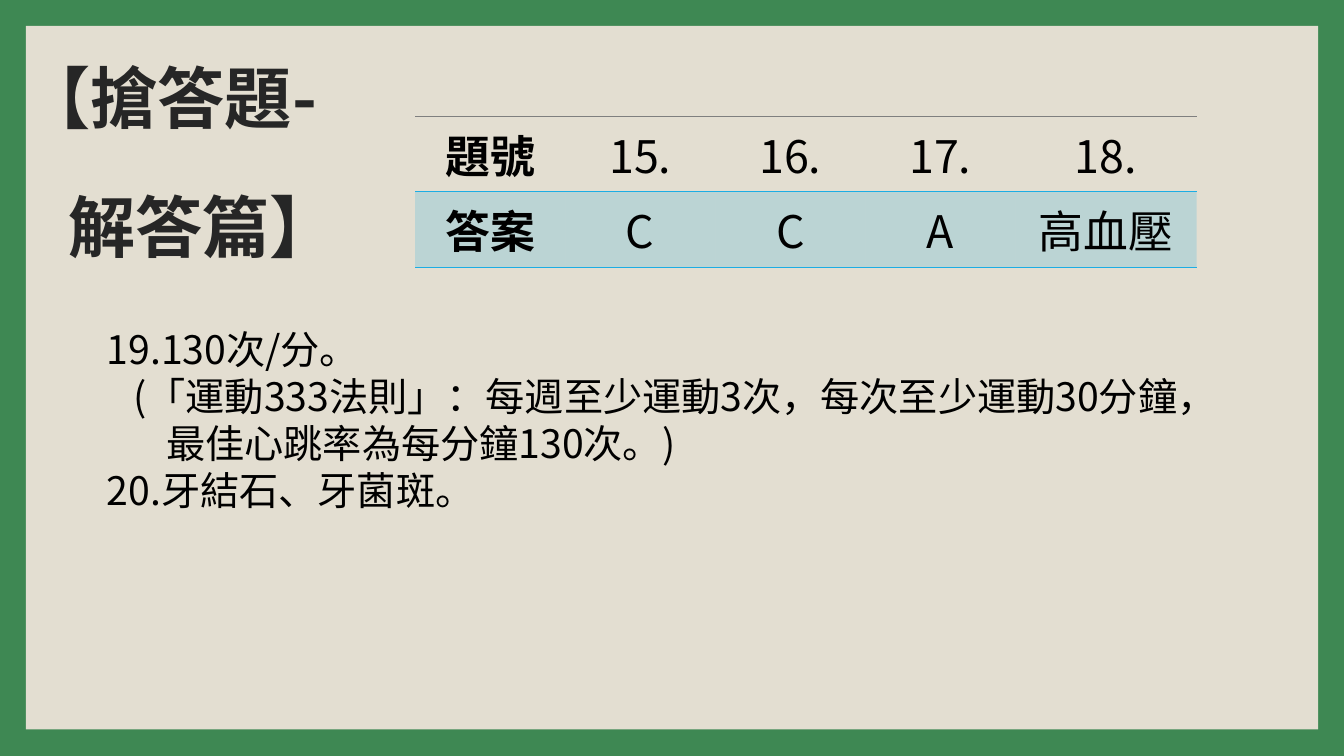
from lxml.etree import SubElement
from pptx import Presentation
from pptx.dml.color import RGBColor
from pptx.enum.shapes import MSO_SHAPE
from pptx.enum.text import MSO_ANCHOR, MSO_AUTO_SIZE, PP_ALIGN
from pptx.oxml import parse_xml
from pptx.oxml.ns import nsdecls, qn
from pptx.util import Pt

FONT = "Noto Sans CJK SC"
BLACK = "000000"
ACCENT = "1CADE4"
GREY = "7F7F7F"
NO_STYLE = "{2D5ABB26-0587-4C30-8999-92F81FD0307C}"


def color(value):
    return RGBColor.from_string(value)


def format_runs(para, size, value, bold=False):
    for span in para.runs:
        span.font.name = FONT
        span.font.size = Pt(size)
        span.font.bold = bold
        span.font.color.rgb = color(value)
        SubElement(span.font._element, qn("a:ea"), typeface=FONT)


def set_indent(para, left, first=0):
    """Set the left margin and first-line offset, without a bullet."""
    properties = para._p.get_or_add_pPr()
    properties.set("marL", str(Pt(left)))
    properties.set("indent", str(Pt(first)))
    SubElement(properties, qn("a:buNone"))


def place(shape, left, top, width, height):
    shape.left, shape.top = Pt(left), Pt(top)
    shape.width, shape.height = Pt(width), Pt(height)


def add_panel(page):
    panel = page.shapes.add_shape(
        MSO_SHAPE.RECTANGLE, Pt(18.5), Pt(18.5), Pt(923), Pt(502.5))
    panel.shadow.inherit = False
    panel.fill.solid()
    panel.fill.fore_color.rgb = color("E3DED1")
    panel.line.fill.background()
    page.shapes._spTree.insert(2, panel._element)


def fill_title(title, lines):
    place(title, 9.4, 30.2, 254.9, 177.1)
    frame = title.text_frame
    frame.text = "\n".join(lines)
    frame.auto_size = MSO_AUTO_SIZE.NONE
    frame.vertical_anchor = MSO_ANCHOR.MIDDLE
    for para in frame.paragraphs:
        para.alignment = PP_ALIGN.LEFT
        para.line_spacing = 0.9
        format_runs(para, 48, "262626", bold=True)
    second = frame.paragraphs[1]
    second.space_before = Pt(41)
    set_indent(second, 32)


def fill_answers(body, answers):
    """Write (text, first-line start) pairs with a shared hanging indent."""
    hang = 42.5
    place(body, 69.1, 225.4, 826.6, 143.3)
    frame = body.text_frame
    frame.text = "\n".join(text for text, _ in answers)
    frame.auto_size = MSO_AUTO_SIZE.NONE
    frame.vertical_anchor = MSO_ANCHOR.TOP
    frame.margin_top = Pt(7)
    for para, (_, start) in zip(frame.paragraphs, answers):
        para.alignment = PP_ALIGN.LEFT
        para.line_spacing = Pt(33.6)
        para.space_before = Pt(0)
        set_indent(para, hang, start - hang)
        format_runs(para, 28, BLACK)


def add_border(cell, side, value, width):
    cell._tc.get_or_add_tcPr().insert(0, parse_xml(
        f'<a:{side} {nsdecls("a")} w="{Pt(width)}"><a:solidFill>'
        f'<a:srgbClr val="{value}"/></a:solidFill></a:{side}>'))


def fill_cell(cell, value, percent):
    cell.fill.solid()
    cell.fill.fore_color.rgb = color(value)
    tint = cell._tc.tcPr.find(f".//{qn('a:srgbClr')}")
    SubElement(tint, qn("a:alpha"), val=str(percent * 1000))


def add_answer_table(page, rows):
    widths = [107.2] * 4 + [129.4]
    row_height = 54
    frame = page.shapes.add_table(
        len(rows), len(widths), Pt(296.6), Pt(82.8),
        Pt(sum(widths)), Pt(row_height * len(rows)))
    table = frame.table
    table.first_row = table.horz_banding = False
    table._tbl.tblPr.find(qn("a:tableStyleId")).text = NO_STYLE
    for column, width in zip(table.columns, widths):
        column.width = Pt(width)
    for r, texts in enumerate(rows):
        for c, text in enumerate(texts):
            cell = table.cell(r, c)
            cell.text = text
            para = cell.text_frame.paragraphs[0]
            para.alignment = PP_ALIGN.CENTER
            format_runs(para, 32, BLACK, bold=c == 0)
            if r:
                fill_cell(cell, ACCENT, 20)
            else:
                cell.fill.background()
            add_border(cell, "lnB", ACCENT, 1)
            if r:
                add_border(cell, "lnT", ACCENT, 1)
            else:
                add_border(cell, "lnT", GREY, 0.5)


def main():
    deck = Presentation()
    deck.slide_width, deck.slide_height = Pt(960), Pt(540)
    page = deck.slides.add_slide(deck.slide_layouts[1])
    page.background.fill.solid()
    page.background.fill.fore_color.rgb = color("3E8853")
    add_panel(page)
    fill_title(page.shapes.title, ["【搶答題-", "解答篇】"])
    add_answer_table(page, [
        ["題號", "15.", "16.", "17.", "18."],
        ["答案", "C", "C", "A", "高血壓"],
    ])
    fill_answers(page.placeholders[1], [
        ("19.130次/分。", 0),
        ("(「運動333法則」：每週至少運動3次，每次至少運動30分鐘，"
         "最佳心跳率為每分鐘130次。)", 19),
        ("20.牙結石、牙菌斑。", 0),
    ])
    deck.save("out.pptx")


if __name__ == "__main__":
    main()
